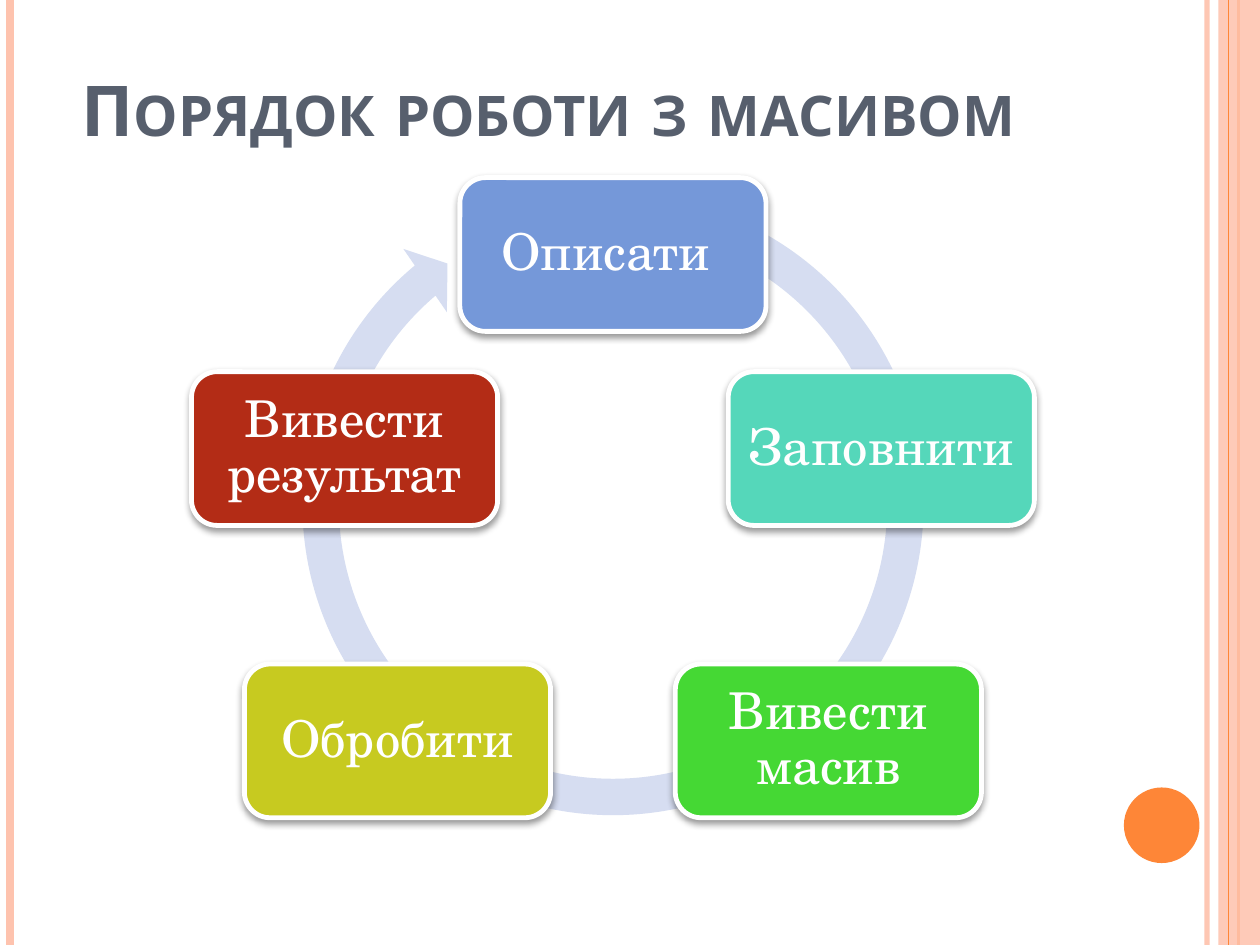
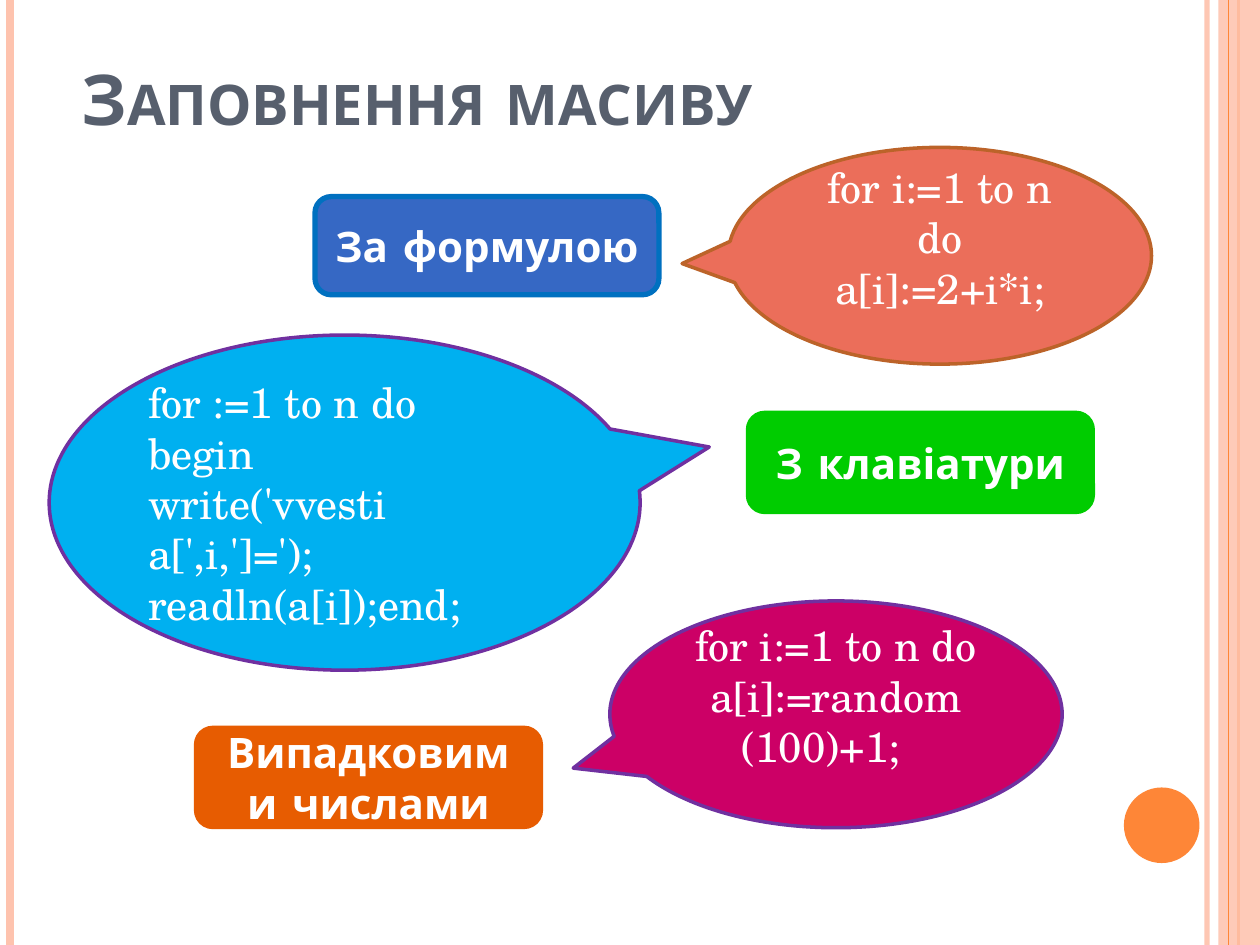
from dataclasses import dataclass, field
from typing import Any

import lxml.etree
import pptx
import pptx.dml.color
import pptx.enum.shapes
import pptx.enum.text
import pptx.oxml.ns
import pptx.util

Inches = pptx.util.Inches
Pt = pptx.util.Pt
SHAPE = pptx.enum.shapes.MSO_SHAPE
ALIGN = pptx.enum.text.PP_ALIGN
ANCHOR = pptx.enum.text.MSO_ANCHOR
qn = pptx.oxml.ns.qn


@dataclass(frozen=True)
class Theme:
    head: str = "575F6D"
    peach: str = "FEC3AE"
    orange: str = "FE8637"
    ring: str = "D6DDF1"
    white: str = "FFFFFF"
    sans: str = "Comic Neue"
    serif: str = "TeX Gyre Schola"
    title_size: int = 40
    node_size: int = 29
    text_size: int = 24


THEME = Theme()


@dataclass(frozen=True)
class Box:
    left: float
    top: float
    width: float
    height: float

    def place(self) -> tuple:
        return tuple(map(Inches, (self.left, self.top, self.width, self.height)))


@dataclass(frozen=True)
class Rule:
    """A full-height line at the side of the slide."""
    x: float
    tint: str
    width: float
    alpha: int = 100


@dataclass(frozen=True)
class Node:
    """A step of the cycle, placed by its centre."""
    text: str
    x: float
    y: float
    fill: str


@dataclass(frozen=True)
class Label:
    text: str
    left: float
    top: float
    fill: str
    edge: str


@dataclass(frozen=True)
class Bubble:
    lines: tuple
    box: Box
    tip: tuple
    fill: str
    edge: str
    align: Any = ALIGN.CENTER
    lift: float = 0.05
    pull: dict = field(default_factory=dict)  # line number -> right margin


RULES = (
    Rule(9.58, THEME.peach, 3, 93),
    Rule(0.08, THEME.peach, 4.5),
    Rule(9.83, THEME.orange, 1.5),
    Rule(9.75, THEME.orange, 0.75),
)
BAND = Box(9.67, 0, 0.33, 7.5)
DOT = Box(8.92, 6.25, 0.6, 0.6)

MID = 4.865
NODE_W, NODE_H = 2.43, 1.22
NODES = (
    Node("Описати ", MID, 2.02, "7598D9"),
    Node("Заповнити ", MID + 2.13, 3.56, "55D7BA"),
    Node("Вивести масив", MID + 1.71, 5.88, "45D834"),
    Node("Обробити", MID - 1.71, 5.88, "C7CA20"),
    Node("Вивести результат", MID - 2.13, 3.56, "B32C16"),
)
RING = Box(2.24, 1.38, 5.25, 5.25)
RING_ADJ = (0.055, 3.307, 138.012, 173.706, 0.058)

LABEL_W, LABEL_H = 2.73, 0.78
LABELS = (
    Label("За формулою", 2.5, 1.56, "3668C4", "0070C0"),
    Label("З клавіатури", 5.94, 3.28, "00CC00", "00CC00"),
    Label("Випадковими числами", 1.56, 5.78, "E75C01", "E75C01"),
)
BUBBLES = (
    Bubble(("for i:=1 to n dо", "a[i]:=2+i*i;"), Box(5.78, 1.17, 3.36, 1.72),
           (-0.609, 0.036), "EB6E5A", "BC6329", lift=0.35),
    Bubble(("for :=1 to n do", "begin", "write('vvesti a[',i,']=');",
            "readln(a[i]);end;"), Box(0.39, 2.66, 4.69, 2.66),
           (0.617, -0.166), "00B0F0", "7030A0", align=ALIGN.LEFT),
    Bubble(("for i:=1 to n do", "a[i]:=random", "(100)+1;"),
           Box(4.84, 4.77, 3.59, 1.8),
           (-0.581, 0.237), "CC0066", "7030A0", lift=0.35, pull={2: 0.24}),
)


def apply(target: Any, values: dict) -> None:
    for name, value in values.items():
        setattr(target, name, value)


def rgb(tint: str) -> pptx.dml.color.RGBColor:
    return pptx.dml.color.RGBColor.from_string(tint)


def fade(part: Any, alpha: int) -> None:
    """Set the opacity, in percent, of the colours in an element."""
    for tint in part.iter(qn("a:srgbClr")):
        lxml.etree.SubElement(tint, qn("a:alpha"), val=str(alpha * 1000))


def draw(slide: Any, kind: Any, box: Box, fill: str, edge: str = "",
         width: float = 0, adj: tuple = ()) -> Any:
    shape = slide.shapes.add_shape(kind, *box.place())
    shape.shadow.inherit = False
    shape.fill.solid()
    shape.fill.fore_color.rgb = rgb(fill)
    if edge:
        shape.line.color.rgb = rgb(edge)
        shape.line.width = Pt(width)
    else:
        shape.line.fill.background()
    for spot, value in enumerate(adj):
        shape.adjustments[spot] = value
    return shape


def write(shape: Any, lines: tuple, font: dict, tint: str, frame: dict,
          para: dict) -> None:
    body = shape.text_frame
    apply(body, {"word_wrap": True, "vertical_anchor": ANCHOR.MIDDLE, **frame})
    for spot, text in enumerate(lines):
        item = body.add_paragraph() if spot else body.paragraphs[0]
        apply(item, para)
        run = item.add_run()
        run.text = text
        apply(run.font, font)
        run.font.color.rgb = rgb(tint)


def cast(shape: Any) -> None:
    """Give a shape a soft shadow straight below it."""
    effect = shape._element.spPr.find(qn("a:effectLst"))
    shade = lxml.etree.SubElement(
        effect, qn("a:outerShdw"), blurRad=str(Pt(4)), dist=str(Pt(2)),
        dir="5400000", algn="ctr", rotWithShape="0")
    lxml.etree.SubElement(shade, qn("a:srgbClr"), val="000000")
    fade(shade, 40)


def add_rule(slide: Any, rule: Rule) -> None:
    x = Inches(rule.x)
    line = slide.shapes.add_connector(
        pptx.enum.shapes.MSO_CONNECTOR.STRAIGHT, x, 0, x, Inches(7.5))
    line.line.color.rgb = rgb(rule.tint)
    line.line.width = Pt(rule.width)
    if rule.alpha < 100:
        fade(line._element, rule.alpha)
    lxml.etree.SubElement(line._element.spPr, qn("a:effectLst"))


def start(deck: Any, title: str, box: Box) -> Any:
    """Add a slide with the shared side bands, dot and title."""
    slide = deck.slides.add_slide(deck.slide_layouts[6])
    for rule in RULES[:3]:
        add_rule(slide, rule)
    fade(draw(slide, SHAPE.RECTANGLE, BAND, THEME.peach)._element, 87)
    add_rule(slide, RULES[3])
    draw(slide, SHAPE.OVAL, DOT, THEME.orange)
    head = slide.shapes.add_textbox(*box.place())
    font = {"name": THEME.sans, "size": Pt(THEME.title_size), "bold": True}
    write(head, (title,), font, THEME.head,
          {"vertical_anchor": ANCHOR.BOTTOM}, {})
    head.text_frame.paragraphs[0].runs[0].font._element.set("cap", "small")
    return slide


def add_node(slide: Any, node: Node) -> None:
    box = Box(node.x - NODE_W / 2, node.y - NODE_H / 2, NODE_W, NODE_H)
    shape = draw(slide, SHAPE.ROUNDED_RECTANGLE, box, node.fill,
                 THEME.white, 2.75)
    cast(shape)
    sides = ("left", "right", "top", "bottom")
    write(shape, (node.text,),
          {"name": THEME.serif, "size": Pt(THEME.node_size)}, THEME.white,
          {f"margin_{side}": Inches(0.06) for side in sides},
          {"alignment": ALIGN.CENTER, "line_spacing": 0.9})


def add_label(slide: Any, label: Label) -> None:
    box = Box(label.left, label.top, LABEL_W, LABEL_H)
    shape = draw(slide, SHAPE.ROUNDED_RECTANGLE, box, label.fill,
                 label.edge, 3)
    font = {"name": THEME.sans, "size": Pt(THEME.text_size), "bold": True}
    write(shape, (label.text,), font, THEME.white, {},
          {"alignment": ALIGN.CENTER})


def add_bubble(slide: Any, bubble: Bubble) -> None:
    shape = draw(slide, SHAPE.OVAL_CALLOUT, bubble.box, bubble.fill,
                 bubble.edge, 2, bubble.tip)
    write(shape, bubble.lines,
          {"name": THEME.serif, "size": Pt(THEME.text_size)}, THEME.white,
          {"margin_bottom": Inches(bubble.lift)}, {"alignment": bubble.align})
    for spot, gap in bubble.pull.items():
        item = shape.text_frame.paragraphs[spot]._p.get_or_add_pPr()
        item.set("marR", str(Inches(gap)))


def main() -> None:
    deck = pptx.Presentation()
    apply(deck, {"slide_width": Inches(10), "slide_height": Inches(7.5)})

    cycle = start(deck, "Порядок роботи з масивом", Box(0.55, 0.39, 8.17, 0.85))
    draw(cycle, SHAPE.CIRCULAR_ARROW, RING, THEME.ring, adj=RING_ADJ)
    for node in NODES:
        add_node(cycle, node)

    ways = start(deck, "Заповнення масиву", Box(0.55, 0.39, 8.02, 0.77))
    for label, bubble in zip(LABELS, BUBBLES):
        add_label(ways, label)
        add_bubble(ways, bubble)

    deck.save("out.pptx")


if __name__ == "__main__":
    main()
